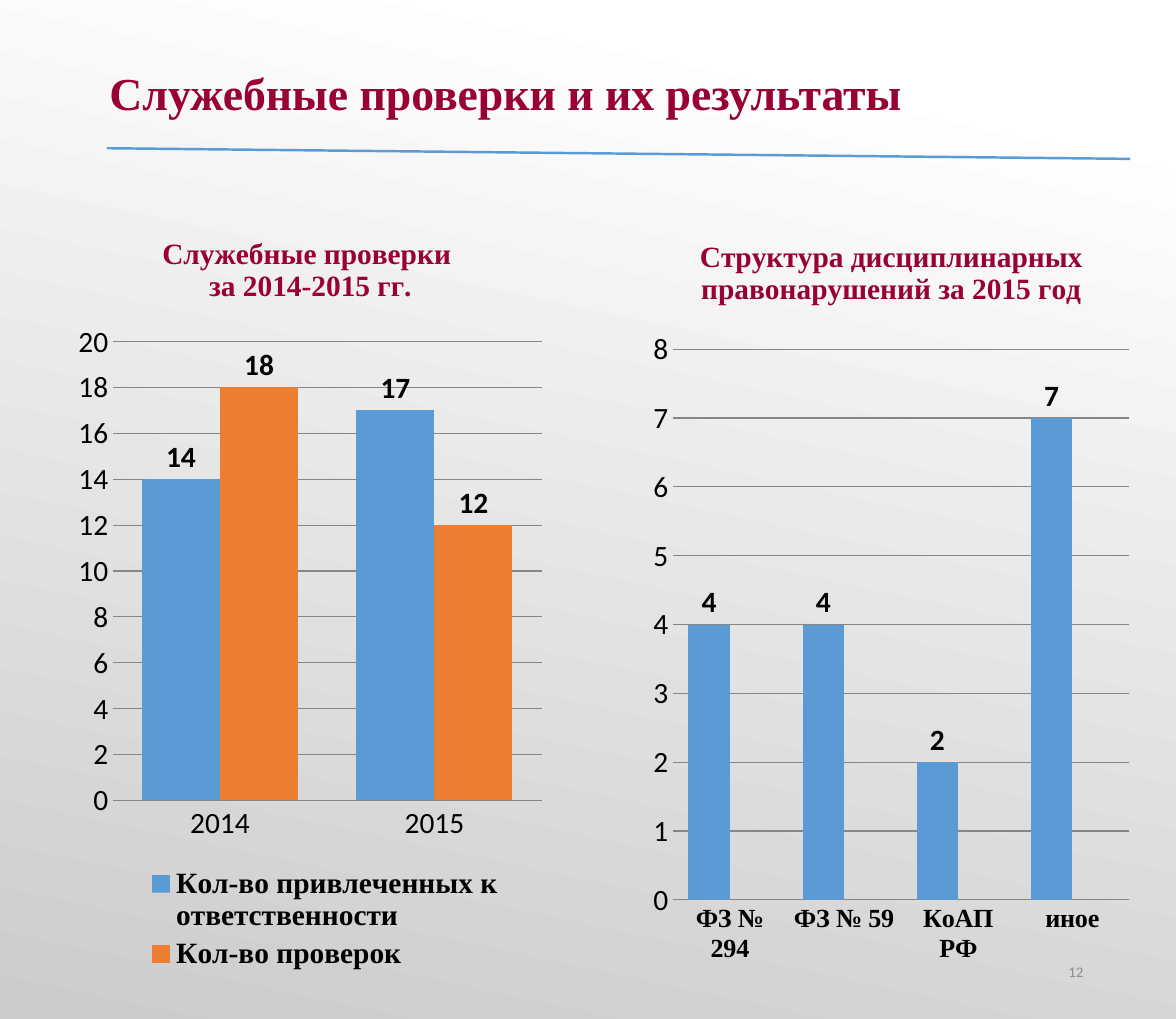
import pptx
import pptx.chart.data
import pptx.dml.color
import pptx.enum.chart
import pptx.enum.shapes
import pptx.enum.text
import pptx.oxml
import pptx.oxml.ns
import pptx.util
from pptx.util import Cm

COLOURS = {
    "heading": "990033", "text": "000000", "number": "8C8C8C",
    "blue": "5B9BD5", "orange": "ED7D31", "grid": "868686",
    "light": "FFFFFF", "dark": "CDCBCB",
}
SERIF, SANS = "Times New Roman", "Calibri"
ALIGN = pptx.enum.text.PP_ALIGN


def rgb(name):
    return pptx.dml.color.RGBColor.from_string(COLOURS[name])


def style_font(font, size=18, face=SANS, colour="text", bold=False):
    font.size = pptx.util.Pt(size)
    font.name = face
    font.bold = bold
    font.color.rgb = rgb(colour)


def write_text(frame, text, align=None, spacing=None, **font_format):
    frame.text = text
    for para in frame.paragraphs:
        para.alignment = align
        para.line_spacing = spacing
        for span in para.runs:
            style_font(span.font, **font_format)


def paint_background(page):
    fill = page.background.fill
    fill.gradient()
    fill.gradient_angle = 360 - 102  # counted anticlockwise
    for stop, place, colour in zip(fill.gradient_stops, (0.1, 1), ("light", "dark")):
        stop.position = place
        stop.color.rgb = rgb(colour)


def add_title(page, text):
    box = page.shapes.title
    box.left, box.top, box.width, box.height = Cm(2.11), Cm(0.89), Cm(22.02), Cm(2.34)
    box.text_frame.vertical_anchor = pptx.enum.text.MSO_ANCHOR.MIDDLE
    write_text(box.text_frame, text, ALIGN.LEFT, 0.9,
               size=28, face=SERIF, colour="heading", bold=True)


def add_rule(page):
    rule = page.shapes.add_connector(pptx.enum.shapes.MSO_CONNECTOR.STRAIGHT,
                                     Cm(2.31), Cm(3.2), Cm(24.41), Cm(3.43))
    rule.line.color.rgb = rgb("blue")
    rule.line.width = pptx.util.Pt(1.5)
    rule._element.spPr.append(pptx.oxml.parse_xml(
        f"<a:effectLst {pptx.oxml.ns.nsdecls('a')}/>"))


def place_part(part, x, y, width, height, inner=False):
    """Fix a chart part at fractions of the chart's size."""
    target = '<c:layoutTarget val="inner"/>' if inner else ""
    modes = '<c:xMode val="edge"/><c:yMode val="edge"/>'
    sizes = "".join(f'<c:{tag} val="{value}"/>'
                    for tag, value in zip("xywh", (x, y, width, height)))
    layout = pptx.oxml.parse_xml(
        f"<c:layout {pptx.oxml.ns.nsdecls('c')}><c:manualLayout>"
        f"{target}{modes}{sizes}</c:manualLayout></c:layout>")
    for old in part.findall(pptx.oxml.ns.qn("c:layout")):
        part.remove(old)
    part.insert(1 if part.tag.endswith("legend") else 0, layout)


def style_axes(chart, top, step, category_font):
    no_tick = pptx.enum.chart.XL_TICK_MARK.NONE
    for axis in (chart.category_axis, chart.value_axis):
        axis.major_tick_mark = axis.minor_tick_mark = no_tick
    style_font(chart.category_axis.tick_labels.font, **category_font)
    chart.category_axis.format.line.color.rgb = rgb("grid")
    values = chart.value_axis
    values.minimum_scale, values.maximum_scale, values.major_unit = 0, top, step
    values.format.line.fill.background()
    values.has_major_gridlines = True
    values.major_gridlines.format.line.color.rgb = rgb("grid")
    values.major_gridlines.format.line.width = pptx.util.Pt(0.75)
    style_font(values.tick_labels.font)


def add_columns(page, left, width, title, categories, series, top, step,
                plot_area, category_font):
    data = pptx.chart.data.CategoryChartData()
    data.categories = categories
    for name, numbers in series:
        data.add_series(name, numbers)
    chart = page.shapes.add_chart(
        pptx.enum.chart.XL_CHART_TYPE.COLUMN_CLUSTERED,
        left, Cm(4.57), width, Cm(16.51), data).chart
    style_font(chart.font)
    chart.has_legend = False
    chart.has_title = True
    write_text(chart.chart_title.text_frame, title,
               face=SERIF, colour="heading", bold=True)
    chart.chart_title.include_in_layout = False
    style_axes(chart, top, step, category_font)

    # Columns and their values
    plot = chart.plots[0]
    plot.gap_width, plot.overlap, plot.vary_by_categories = 75, 0, False
    for columns, colour in zip(plot.series, ("blue", "orange")):
        columns.format.fill.solid()
        columns.format.fill.fore_color.rgb = rgb(colour)
        labels = columns.data_labels
        labels.show_value = True
        labels.position = pptx.enum.chart.XL_LABEL_POSITION.OUTSIDE_END
        style_font(labels.font, bold=True)
    place_part(chart._chartSpace.chart.plotArea, *plot_area, inner=True)
    return chart


def add_legend(chart):
    chart.has_legend = True
    chart.legend.position = pptx.enum.chart.XL_LEGEND_POSITION.BOTTOM
    chart.legend.include_in_layout = False
    style_font(chart.legend.font, face=SERIF, bold=True)
    place_part(chart.legend._element, 0.13, 0.85, 0.8, 0.15)


def add_page_number(page, number):
    box = page.shapes.add_textbox(Cm(17.93), Cm(20.4), Cm(5.72), Cm(1.17))
    box.text_frame.word_wrap = True
    box.text_frame.vertical_anchor = pptx.enum.text.MSO_ANCHOR.MIDDLE
    write_text(box.text_frame, number, ALIGN.RIGHT, size=9, colour="number")


def main():
    deck = pptx.Presentation()
    deck.slide_width, deck.slide_height = Cm(25.4), Cm(22)
    page = deck.slides.add_slide(deck.slide_layouts[5])
    paint_background(page)
    add_title(page, "Служебные проверки и их результаты")

    # Inspections by year
    inspections = add_columns(
        page, Cm(1.5), Cm(10.41), "Служебные проверки \nза 2014-2015 гг.",
        ["2014", "2015"],
        [("Кол-во привлеченных к ответственности", (14, 17)),
         ("Кол-во проверок", (18, 12))],
        20, 2, (0.09, 0.17, 0.89, 0.6), {})
    add_legend(inspections)

    # Kinds of offence
    add_columns(
        page, Cm(13.89), Cm(10.72),
        "Структура дисциплинарных правонарушений за 2015 год",
        ["ФЗ № 294", "ФЗ № 59", "КоАП РФ", "иное"],
        [("Series 1", (4, 4, 2, 7)), ("Series 2", (None,) * 4)],
        8, 1, (0.06, 0.18, 0.92, 0.72),
        {"size": 16, "face": SERIF, "bold": True})

    add_page_number(page, "12")
    add_rule(page)
    deck.save("out.pptx")


if __name__ == "__main__":
    main()
